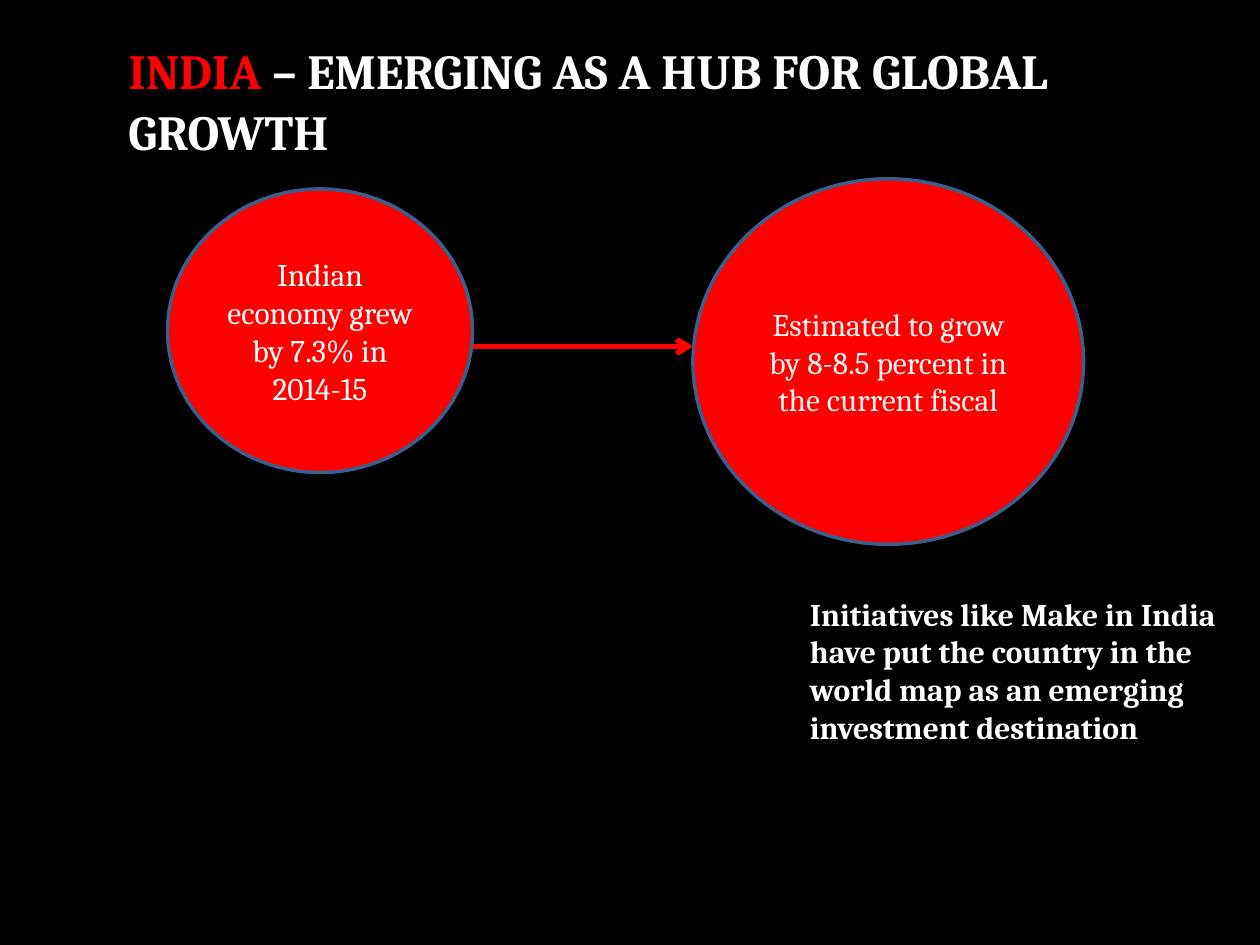
from lxml.etree import SubElement
from pptx import Presentation
from pptx.dml.color import RGBColor
from pptx.enum.shapes import MSO_CONNECTOR as LINE, MSO_SHAPE as SHAPE
from pptx.enum.text import MSO_ANCHOR as ANCHOR, PP_ALIGN as ALIGN
from pptx.oxml.ns import qn
from pptx.util import Inches, Pt

BLACK = RGBColor(0x00, 0x00, 0x00)
RED = RGBColor(0xFF, 0x00, 0x00)
WHITE = RGBColor(0xFF, 0xFF, 0xFF)
PALE = RGBColor(0xF2, 0xF2, 0xF2)
BLUE = RGBColor(0x3A, 0x5F, 0x8C)

TITLE = [("INDIA", RED), (" – EMERGING AS A HUB FOR GLOBAL GROWTH", WHITE)]
TITLE_BOX = (0.92, 0.25, 9.08, 1.08)
NOTE = [("Initiatives like Make in India have put the country in the world map "
         "as an emerging investment destination", WHITE)]
NOTE_BOX = (6.33, 4.67, 3.5, 1.92)
CIRCLES = [
    ((1.33, 1.5, 2.42, 2.25), [("Indian economy grew by 7.3% in 2014-15", WHITE)]),
    ((5.5, 1.42, 3.1, 2.9),
     [("Estimated to grow by 8-8.5 percent in the current fiscal", PALE)]),
]
ARROW_Y = 2.75


def inches(values):
    return [Inches(v) for v in values]


def write(shape, runs, size=18, bold=False, align=ALIGN.LEFT,
          anchor=ANCHOR.TOP, spacing=None):
    """Fill a shape with one paragraph of (text, colour) runs."""
    frame = shape.text_frame
    frame.word_wrap = True
    frame.vertical_anchor = anchor
    para = frame.paragraphs[0]
    para.alignment = align
    if spacing:
        para.line_spacing = Pt(spacing)
    for text, color in runs:
        run = para.add_run()
        run.text = text
        font = run.font
        font.name, font.size, font.bold = "Cambria", Pt(size), bold
        font.color.rgb = color


def add_circle(slide, box, runs):
    oval = slide.shapes.add_shape(SHAPE.OVAL, *inches(box))
    oval.shadow.inherit = False
    oval.fill.solid()
    oval.fill.fore_color.rgb = RED
    oval.line.color.rgb = BLUE
    oval.line.width = Pt(2)
    write(oval, runs, align=ALIGN.CENTER, anchor=ANCHOR.MIDDLE)


def add_arrow(slide, start, end, y):
    arrow = slide.shapes.add_connector(LINE.STRAIGHT, *inches((start, y, end, y)))
    arrow.line.color.rgb = RED
    arrow.line.width = Pt(3)
    SubElement(arrow.line._get_or_add_ln(), qn("a:tailEnd"), type="arrow")
    SubElement(arrow._element.spPr, qn("a:effectLst"))


def main():
    deck = Presentation()
    deck.slide_width, deck.slide_height = inches((10, 7.5))
    slide = deck.slides.add_slide(deck.slide_layouts[6])
    slide.background.fill.solid()
    slide.background.fill.fore_color.rgb = BLACK

    for box, runs in CIRCLES:
        add_circle(slide, box, runs)
    (left, _, width, _), (end, *_) = [box for box, _ in CIRCLES]
    add_arrow(slide, left + width, end, ARROW_Y)

    write(slide.shapes.add_textbox(*inches(NOTE_BOX)), NOTE, bold=True)
    write(slide.shapes.add_textbox(*inches(TITLE_BOX)), TITLE,
          size=28, bold=True, spacing=35)
    deck.save("out.pptx")


if __name__ == "__main__":
    main()
